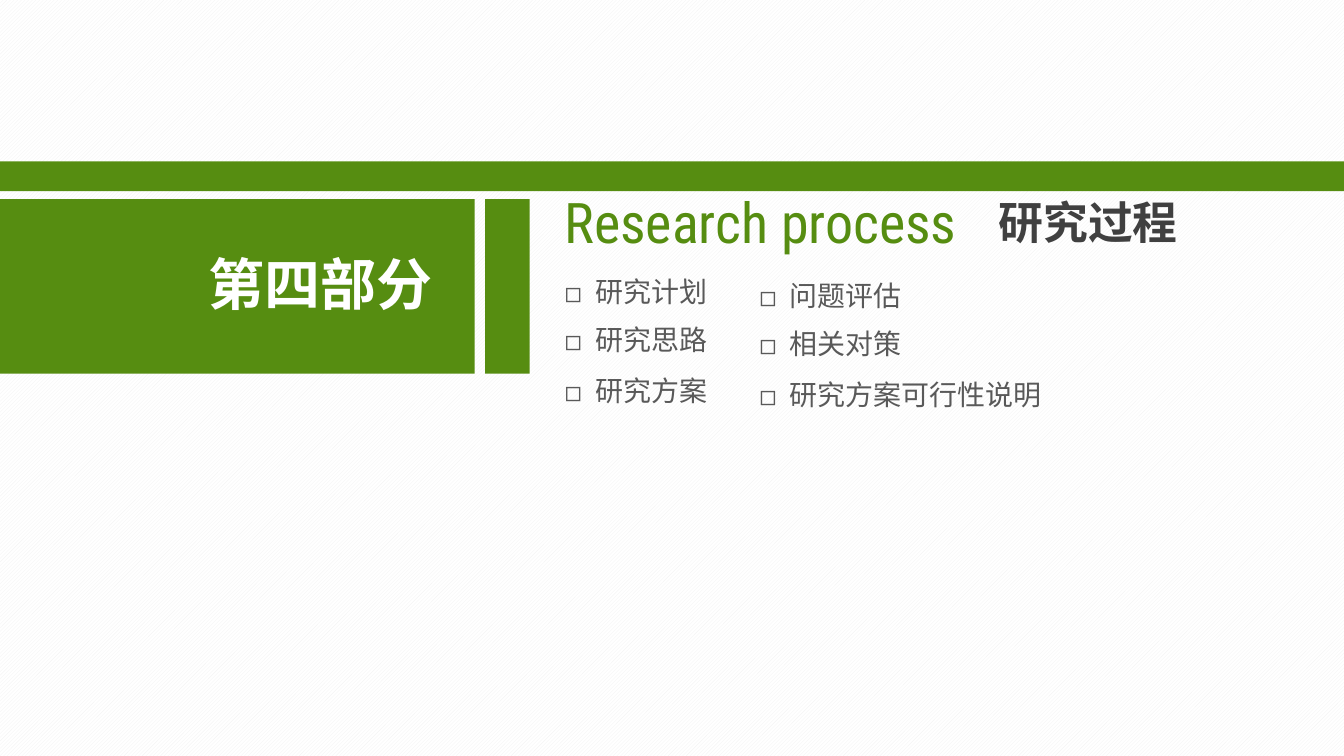
from lxml import etree
from pptx import Presentation
from pptx import util as u
from pptx.dml.color import RGBColor
from pptx.enum import dml, shapes, text
from pptx.oxml.ns import qn

COLORS = {
    "green": "568D11",
    "white": "FFFFFF",
    "hatch": "F2F2F2",
    "heading": "404040",
    "body": "595959",
}
CHINESE, LATIN = "Noto Sans CJK SC", "Roboto Condensed"

# Lengths in centimetres: left, top, width, height
BARS = [
    (0, 3.76, 8.97, 3.3),
    (0, 3.05, 25.4, 0.56),
    (9.17, 3.76, 0.84, 3.3),
]
# Wording, box, font name, colour, font format
TITLES = [
    ("第四部分", (3.76, 4.62, 4.65, 1.47), CHINESE, "white", {"size": u.Pt(30), "bold": True}),
    ("Research process", (10.49, 3.45, 8.33, 1.47), LATIN, "green", {"size": u.Pt(30)}),
    ("研究过程", (18.69, 3.58, 3.81, 1.22), CHINESE, "heading", {"size": u.Pt(24), "bold": True}),
]
# Left and top of each column, then its items
TOPICS = [
    (10.49, 5.08, ["研究计划", "研究思路", "研究方案"]),
    (14.17, 5.16, ["问题评估", "相关对策", "研究方案可行性说明"]),
]
ROW_OFFSETS = (0, 0.91, 1.88)
TOPIC_HEIGHT = 0.84
CHARACTER_WIDTH, TOPIC_PADDING = 0.53, 1.0
TOPIC_FORMAT = {"size": u.Pt(15)}
BULLET, BULLET_INDENT = "◻", u.Cm(0.58)
FRAME_FORMAT = {
    "margin_left": u.Cm(0.18),
    "margin_right": u.Cm(0.18),
    "margin_top": u.Cm(0.1),
    "margin_bottom": u.Cm(0.1),
    "word_wrap": False,
    "auto_size": text.MSO_AUTO_SIZE.SHAPE_TO_FIT_TEXT,
}


def color(name):
    return RGBColor.from_string(COLORS[name])


def set_values(target, values):
    for name, value in values.items():
        setattr(target, name, value)


def paint_background(slide):
    fill = slide.background.fill
    fill.patterned()
    fill.pattern = dml.MSO_PATTERN.LIGHT_UPWARD_DIAGONAL
    fill.fore_color.rgb = color("hatch")
    fill.back_color.rgb = color("white")


def add_bar(slide, box):
    shape = slide.shapes.add_shape(shapes.MSO_SHAPE.RECTANGLE, *map(u.Cm, box))
    shape.shadow.inherit = False
    shape.fill.solid()
    shape.fill.fore_color.rgb = color("green")
    shape.line.fill.background()


def add_label(slide, wording, box, font_name, color_name, font_format):
    """Add a one-line text box and return its paragraph."""
    frame = slide.shapes.add_textbox(*map(u.Cm, box)).text_frame
    set_values(frame, FRAME_FORMAT)
    paragraph = frame.paragraphs[0]
    run = paragraph.add_run()
    run.text = wording
    set_values(run.font, {"name": font_name, **font_format})
    run.font.color.rgb = color(color_name)
    # East Asian characters take their typeface from a separate element
    etree.SubElement(run.font._element, qn("a:ea"), typeface=font_name)
    return paragraph


def add_bullet(paragraph):
    properties = paragraph._p.get_or_add_pPr()
    properties.set("marL", str(BULLET_INDENT))
    properties.set("indent", str(-BULLET_INDENT))
    etree.SubElement(properties, qn("a:buFont"), typeface=CHINESE)
    etree.SubElement(properties, qn("a:buChar"), char=BULLET)


def main():
    presentation = Presentation()
    set_values(presentation, {"slide_width": u.Cm(25.4), "slide_height": u.Cm(14.28)})
    slide = presentation.slides.add_slide(presentation.slide_layouts[6])
    paint_background(slide)
    for bar in BARS:
        add_bar(slide, bar)
    for title in TITLES:
        add_label(slide, *title)
    for left, top, items in TOPICS:
        for item, offset in zip(items, ROW_OFFSETS):
            width = TOPIC_PADDING + CHARACTER_WIDTH * len(item)
            box = (left, top + offset, width, TOPIC_HEIGHT)
            add_bullet(add_label(slide, item, box, CHINESE, "body", TOPIC_FORMAT))
    presentation.save("out.pptx")


if __name__ == "__main__":
    main()
